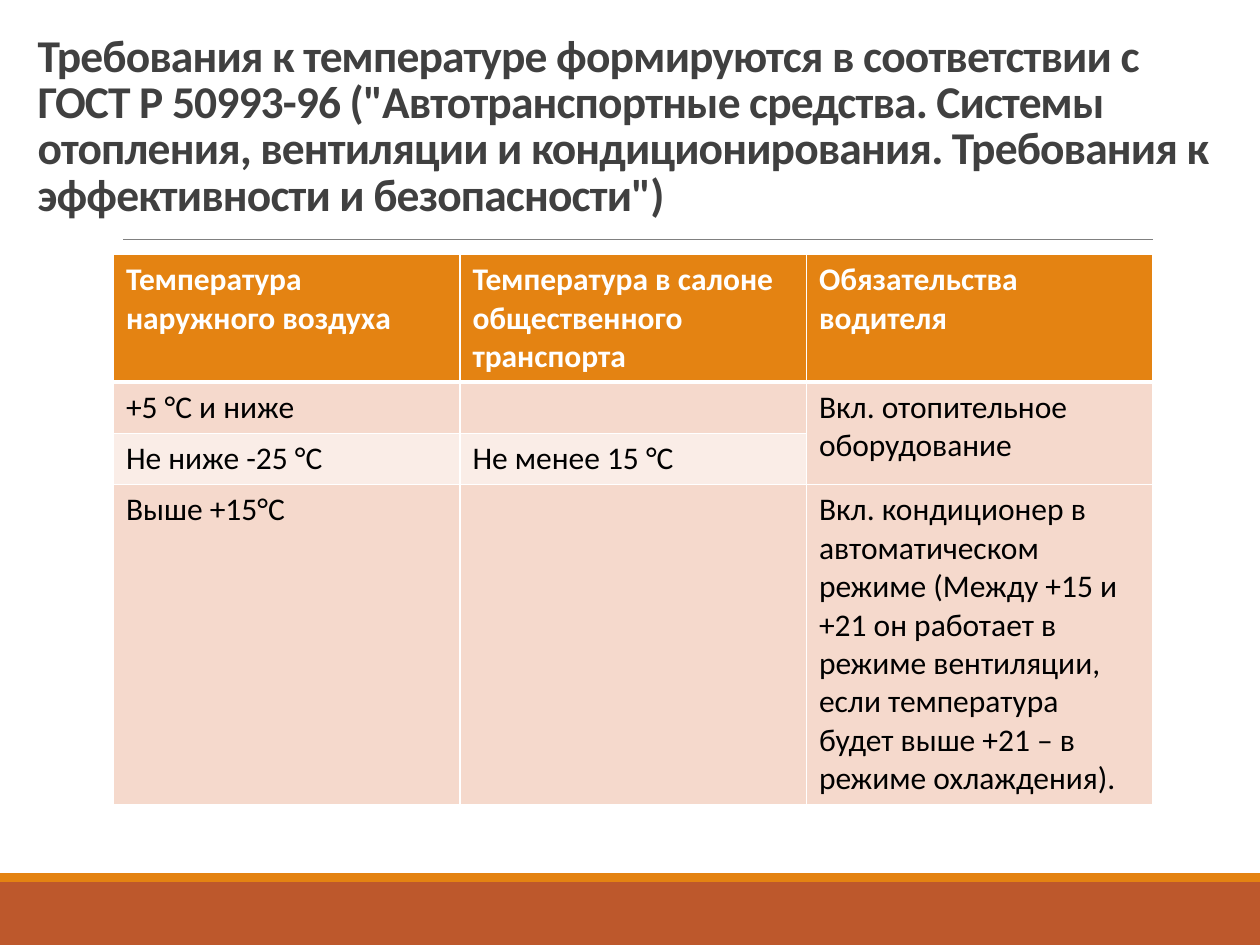
from typing import NamedTuple

from lxml import etree
from pptx import Presentation
from pptx.dml.color import RGBColor
from pptx.enum.shapes import MSO_CONNECTOR, MSO_SHAPE
from pptx.enum.text import MSO_ANCHOR
from pptx.oxml.ns import qn
from pptx.util import Pt

RECT = MSO_SHAPE.RECTANGLE
STRAIGHT = MSO_CONNECTOR.STRAIGHT
BOTTOM = MSO_ANCHOR.BOTTOM

WHITE = RGBColor(0xFF, 0xFF, 0xFF)
BLACK = RGBColor(0x00, 0x00, 0x00)
DARK = RGBColor(0x40, 0x40, 0x40)
GRAY = RGBColor(0x80, 0x80, 0x80)
ORANGE = RGBColor(0xE4, 0x83, 0x12)
RUST = RGBColor(0xBD, 0x58, 0x2C)
PINK = RGBColor(0xF5, 0xD9, 0xCC)
PALE = RGBColor(0xFA, 0xED, 0xE7)

FONT = "Calibri"
SLIDE_W, SLIDE_H = 720, 540
COL_W = 198

TITLE = (
    "Требования к температуре формируются в соответствии с ГОСТ Р 50993-96 "
    '("Автотранспортные средства. Системы отопления, вентиляции и '
    'кондиционирования. Требования к эффективности и безопасности")'
)


class Band(NamedTuple):
    top: float
    height: float
    color: RGBColor


class Row(NamedTuple):
    height: float
    fill: RGBColor
    texts: tuple[str, str, str]


BANDS = [Band(504, 36, RUST), Band(499, 5, ORANGE)]

ROWS = [
    Row(73, ORANGE, ("Температура наружного воздуха",
                     "Температура в салоне общественного транспорта",
                     "Обязательства водителя")),
    Row(29.2, PINK, ("+5 °С и ниже", "", "Вкл. отопительное оборудование")),
    Row(29.2, PALE, ("Не ниже -25 °С", "Не менее 15 °С", "")),
    Row(183, PINK, ("Выше +15°С", "",
                    "Вкл. кондиционер в автоматическом режиме (Между +15 и +21 "
                    "он работает в режиме вентиляции, если температура будет "
                    "выше +21 – в режиме охлаждения).")),
]


def write(tf, text: str, *, size: float, color: RGBColor, bold: bool = False,
          line_spacing: float | None = None, tracking: float = 0) -> None:
    """Fill a text frame with one formatted paragraph."""
    p = tf.paragraphs[0]
    if line_spacing:
        p.line_spacing = line_spacing
    p.font.size = Pt(size)
    if not text:
        return
    r = p.add_run()
    r.text = text
    r.font.name = FONT
    r.font.size = Pt(size)
    r.font.bold = bold
    r.font.color.rgb = color
    if tracking:
        r.font._element.set("spc", str(round(tracking * 100)))


def draw_band(slide, band: Band) -> None:
    s = slide.shapes.add_shape(RECT, 0, Pt(band.top), Pt(SLIDE_W), Pt(band.height))
    s.shadow.inherit = False
    s.fill.solid()
    s.fill.fore_color.rgb = band.color
    s.line.fill.background()


def draw_rule(slide, x1: float, x2: float, y: float) -> None:
    line = slide.shapes.add_connector(STRAIGHT, Pt(x1), Pt(y), Pt(x2), Pt(y))
    line.line.color.rgb = GRAY
    line.line.width = Pt(0.5)
    etree.SubElement(line._element.spPr, qn("a:effectLst"))


def set_borders(cell, top: float, bottom: float) -> None:
    """Give a cell white borders; call before setting its fill."""
    tc_pr = cell._tc.get_or_add_tcPr()
    for side, width in (("L", 1), ("R", 1), ("T", top), ("B", bottom)):
        ln = etree.SubElement(tc_pr, qn(f"a:ln{side}"), w=str(Pt(width)))
        fill = etree.SubElement(ln, qn("a:solidFill"))
        etree.SubElement(fill, qn("a:srgbClr"), val=str(WHITE))


def draw_table(slide, left: float, top: float, rows: list[Row]) -> None:
    n_cols = len(rows[0].texts)
    table = slide.shapes.add_table(
        len(rows), n_cols, Pt(left), Pt(top), Pt(COL_W * n_cols),
        Pt(sum(row.height for row in rows))).table
    table.horz_banding = False
    for col in table.columns:
        col.width = Pt(COL_W)
    for i, row in enumerate(rows):
        header = i == 0
        table.rows[i].height = Pt(row.height)
        for j, text in enumerate(row.texts):
            cell = table.cell(i, j)
            set_borders(cell, top=3 if i == 1 else 1, bottom=3 if header else 1)
            cell.fill.solid()
            cell.fill.fore_color.rgb = row.fill
            write(cell.text_frame, text, size=18, bold=header,
                  color=WHITE if header else BLACK)
    # The heating duty covers both cold-weather rows
    table.cell(1, 2).merge(table.cell(2, 2))


def main() -> None:
    prs = Presentation()
    prs.slide_width, prs.slide_height = Pt(SLIDE_W), Pt(SLIDE_H)
    slide = prs.slides.add_slide(prs.slide_layouts[6])

    # Footer bands and the rule under the title
    for band in BANDS:
        draw_band(slide, band)
    draw_rule(slide, 70.5, 658.8, 136.8)

    # Title
    tf = slide.shapes.add_textbox(Pt(14.4), Pt(15.1), Pt(686.2), Pt(114.5)).text_frame
    tf.word_wrap = True
    tf.vertical_anchor = BOTTOM
    write(tf, TITLE, size=26, color=DARK, bold=True, line_spacing=0.85, tracking=-0.5)

    # Temperature requirements
    draw_table(slide, 64.8, 145.4, ROWS)

    prs.save("out.pptx")


if __name__ == "__main__":
    main()
